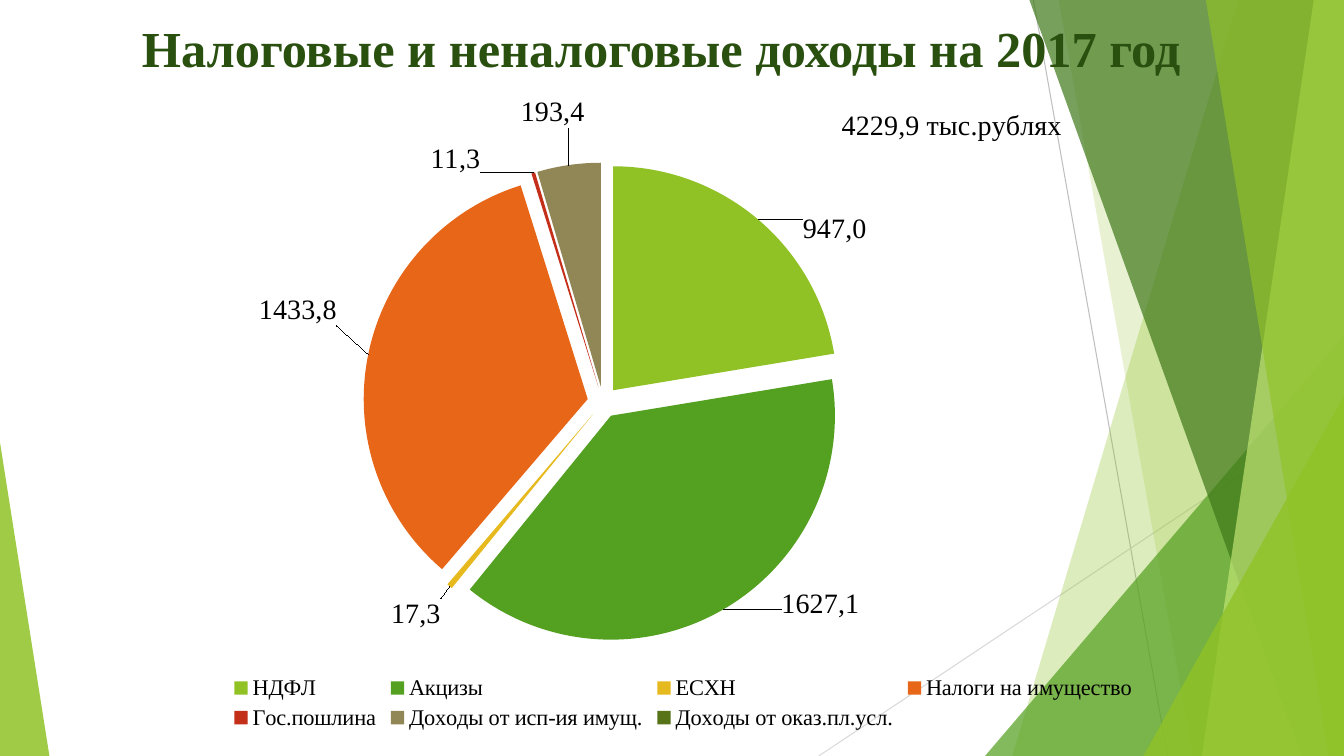
from lxml import etree
from pptx import Presentation
from pptx.chart.data import CategoryChartData
from pptx.dml.color import RGBColor
from pptx.enum import chart as kinds, shapes, text
from pptx.oxml.ns import qn
from pptx.util import Inches, Pt

WIDTH, HEIGHT = 13.33, 7.5
SERIF = "Times New Roman"
TITLE = "Налоговые и неналоговые доходы на 2017 год"
TOTAL = "4229,9 тыс.рублях"

# name, value, colour, label shift from the slice edge (inches)
INCOME = [
    ("НДФЛ", 947.0, "90C226", (0.41, 0.3)),
    ("Акцизы", 1627.1, "54A021", (0.55, -0.26)),
    ("ЕСХН", 17.3, "E6B91E", (-0.05, 0.08)),
    ("Налоги на имущество", 1433.8, "E76618", (-0.26, -0.27)),
    ("Гос.пошлина", 11.3, "C42F1A", (-0.51, 0.08)),
    ("Доходы от исп-ия имущ.", 193.4, "918655", (0.17, -0.31)),
    ("Доходы от оказ.пл.усл.", None, "567417", None),
]
CHART_BOX = (0.43, 0.75, 12.69, 6.54)

LINES = [((10.25, 0), (11.58, HEIGHT), "BFBFBF"),
         ((WIDTH, 4.03), (8.12, HEIGHT), "D9D9D9")]
# Bands reach the right edge: top x, bottom x, colour, opacity %
# Triangles: left, top, width, apex position, colour, opacity %
DECOR = [
    ("band", 12.28, 10.04, "90C226", 30),
    ("band", 10.5, 11.83, "90C226", 20),
    ("triangle", 9.77, 3.33, 3.56, 1, "54A021", 72),
    ("band", 10.21, 12.91, "3F7819", 70),
    ("band", 13.03, 11.92, "C0E474", 70),
    ("band", 11.96, 13.18, "90C226", 65),
    ("triangle", 11.34, 3.93, 1.99, 1, "90C226", 80),
    ("triangle", 0, 4.39, 0.49, 0, "90C226", 85),
]


def rgb(value):
    return RGBColor.from_string(value)


def style_font(font, size, color="000000", bold=False):
    font.name, font.size, font.bold = SERIF, Pt(size), bold
    font.color.rgb = rgb(color)


def paint(shape, color, opacity):
    shape.shadow.inherit = False
    shape.line.fill.background()
    shape.fill.solid()
    shape.fill.fore_color.rgb = rgb(color)
    fill_color = shape.element.spPr.find(".//" + qn("a:srgbClr"))
    etree.SubElement(fill_color, qn("a:alpha"), val=str(opacity * 1000))


def add_line(slide, start, end, color):
    line = slide.shapes.add_connector(
        shapes.MSO_CONNECTOR.STRAIGHT, *map(Inches, start + end))
    line.line.color.rgb = rgb(color)
    line.line.width = Pt(0.75)
    etree.SubElement(line.element.spPr, qn("a:effectLst"))


def add_band(slide, top_x, bottom_x, color, opacity):
    builder = slide.shapes.build_freeform(Inches(top_x), 0)
    corners = [(WIDTH, 0), (WIDTH, HEIGHT), (bottom_x, HEIGHT)]
    builder.add_line_segments([(Inches(x), Inches(y)) for x, y in corners])
    paint(builder.convert_to_shape(), color, opacity)


def add_triangle(slide, left, top, width, apex, color, opacity):
    triangle = slide.shapes.add_shape(
        shapes.MSO_SHAPE.ISOSCELES_TRIANGLE,
        *map(Inches, (left, top, width, HEIGHT - top)))
    triangle.adjustments[0] = apex
    paint(triangle, color, opacity)


def set_layout(parent, index, **settings):
    """Give a chart part a manual layout, in fractions of the chart."""
    for old in parent.findall(qn("c:layout")):
        parent.remove(old)
    layout = etree.Element(qn("c:layout"))
    manual = etree.SubElement(layout, qn("c:manualLayout"))
    for name, value in settings.items():
        etree.SubElement(manual, qn("c:" + name), val=str(value))
    parent.insert(index, layout)


def add_title(slide):
    title = slide.shapes.title
    title.left, title.top, title.width, title.height = map(
        Inches, (0.81, 0.12, 11.5, 1.45))
    title.text_frame.text = TITLE
    title.text_frame.vertical_anchor = text.MSO_ANCHOR.TOP
    para = title.text_frame.paragraphs[0]
    para.alignment = text.PP_ALIGN.CENTER
    style_font(para.runs[0].font, 36, "2A5010", True)
    slide.shapes.element.append(title.element)  # in front of the bands


def style_slices(chart):
    series = chart.plots[0].series[0]
    labels = series.data_labels
    labels.show_value = True
    labels.number_format, labels.number_format_is_linked = "0.0", False
    labels.position = kinds.XL_LABEL_POSITION.OUTSIDE_END
    style_font(labels.font, 20)
    for index, (name, value, color, shift) in enumerate(INCOME):
        point = series.points[index]
        point.format.fill.solid()
        point.format.fill.fore_color.rgb = rgb(color)
        if value is None:
            continue
        label = point.data_label
        label.text_frame.text = f"{value:.1f}".replace(".", ",")
        style_font(label.text_frame.paragraphs[0].runs[0].font, 20)
        label.position = kinds.XL_LABEL_POSITION.OUTSIDE_END
        element = chart.element.findall(".//" + qn("c:dLbl"))[-1]
        set_layout(element, 1, x=round(shift[0] / CHART_BOX[2], 3),
                   y=round(shift[1] / CHART_BOX[3], 3))
    explosion = etree.Element(qn("c:explosion"), val="7")
    chart.element.find(".//" + qn("c:dPt")).addprevious(explosion)


def add_pie(slide):
    data = CategoryChartData(number_format="0.0")
    data.categories = [row[0] for row in INCOME]
    data.add_series("Доходы", [row[1] for row in INCOME])
    chart = slide.shapes.add_chart(
        kinds.XL_CHART_TYPE.PIE, *map(Inches, CHART_BOX), data).chart
    style_font(chart.font, 10)
    chart.font.name = "Roboto"

    chart.has_title = True
    heading = chart.chart_title
    heading.text_frame.text = TOTAL
    style_font(heading.text_frame.paragraphs[0].runs[0].font, 20)
    heading_element = chart.element.find(".//" + qn("c:title"))
    set_layout(heading_element, 1, xMode="edge", yMode="edge", x=0.62, y=0.04)

    chart.has_legend = True
    chart.legend.position = kinds.XL_LEGEND_POSITION.BOTTOM
    chart.legend.include_in_layout = False
    style_font(chart.legend.font, 16)

    plot_area = chart.element.find(".//" + qn("c:plotArea"))
    set_layout(plot_area, 0, layoutTarget="inner", xMode="edge", yMode="edge",
               x=0, y=0.132, w=0.875, h=0.727)
    chart.plots[0].vary_by_categories = True
    style_slices(chart)


def main():
    deck = Presentation()
    deck.slide_width, deck.slide_height = Inches(WIDTH), Inches(HEIGHT)
    slide = deck.slides.add_slide(deck.slide_layouts[5])
    for line in LINES:
        add_line(slide, *line)
    draw = {"band": add_band, "triangle": add_triangle}
    for kind, *values in DECOR:
        draw[kind](slide, *values)
    add_title(slide)
    add_pie(slide)
    deck.save("out.pptx")


if __name__ == "__main__":
    main()
